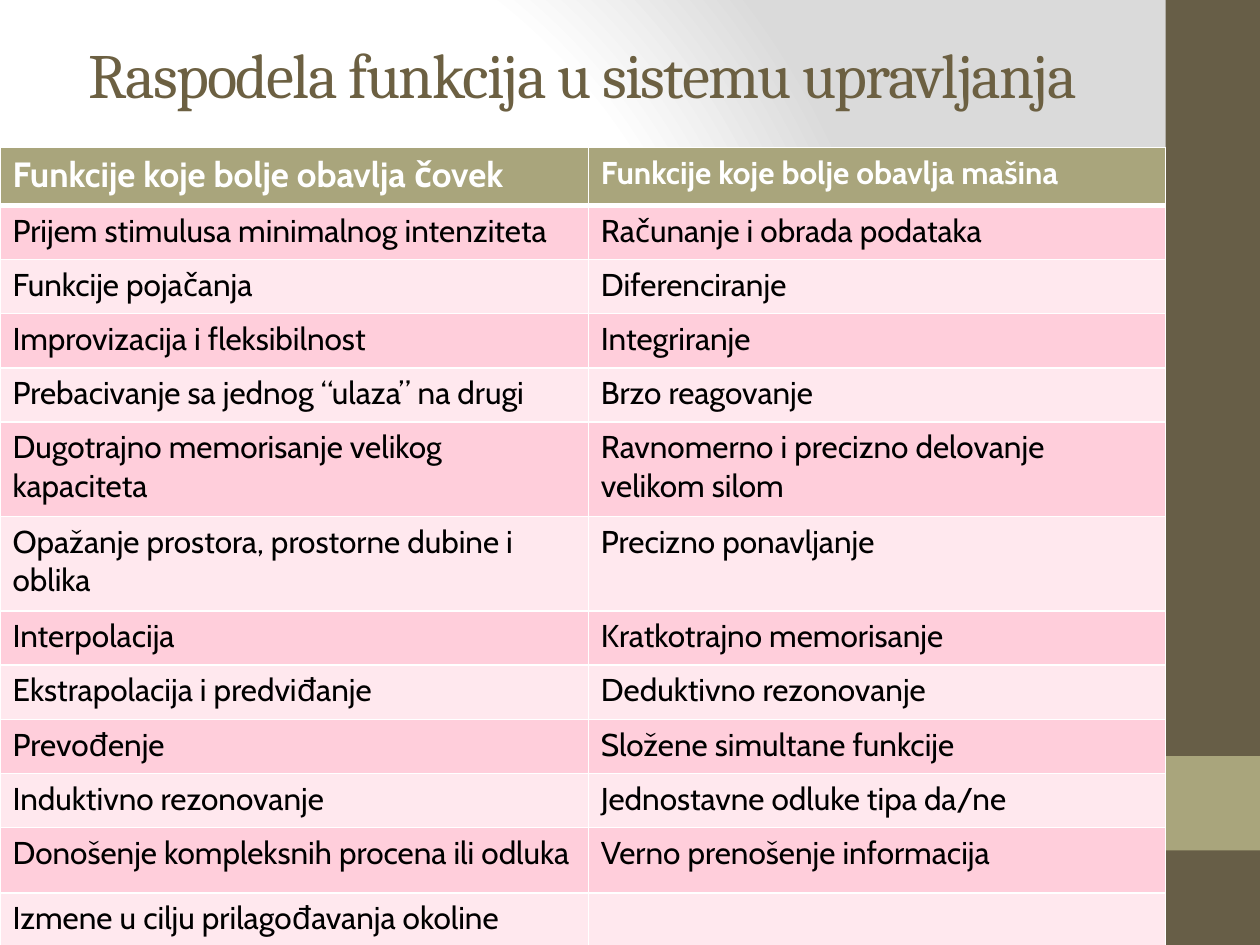
from pptx import Presentation
from pptx.dml.color import RGBColor
from pptx.enum import text
from pptx.oxml import parse_xml
from pptx.oxml.ns import nsdecls
from pptx.util import Inches, Pt

# Content
TITLE = "Raspodela funkcija u sistemu upravljanja"
HEADER = ("Funkcije koje bolje obavlja čovek", "Funkcije koje bolje obavlja mašina")
HEADER_SIZES = (20, 18)
FUNCTIONS = [
    ("Prijem stimulusa minimalnog intenziteta", "Računanje i obrada podataka"),
    ("Funkcije pojačanja", "Diferenciranje"),
    ("Improvizacija i fleksibilnost", "Integriranje"),
    ("Prebacivanje sa jednog “ulaza” na drugi", "Brzo reagovanje"),
    ("Dugotrajno memorisanje velikog kapaciteta",
     "Ravnomerno i precizno delovanje velikom silom"),
    ("Opažanje prostora, prostorne dubine i oblika", "Precizno ponavljanje"),
    ("Interpolacija", "Kratkotrajno memorisanje"),
    ("Ekstrapolacija i predviđanje", "Deduktivno rezonovanje"),
    ("Prevođenje", "Složene simultane funkcije"),
    ("Induktivno rezonovanje", "Jednostavne odluke tipa da/ne"),
    ("Donošenje kompleksnih procena ili odluka", "Verno prenošenje informacija"),
    ("Izmene u cilju prilagođavanja okoline", ""),
]

COLORS = {
    "white": "FFFFFF", "gray": "DADADA", "black": "000000",
    "brown": "675E47", "olive": "A9A57C", "title": "6C6042",
    "pink": "FFCEDB", "pale": "FFE8EE",
}

# Layout, in inches
CONTENT_WIDTH = 9.25
COLUMN_WIDTHS = (4.67, 4.58)
ROW_HEIGHT = 0.43
SPECIAL_HEIGHTS = {0: 0.46, 5: 0.75, 6: 0.75, 11: 0.52}


def color(name):
    return RGBColor.from_string(COLORS[name])


def write(frame, words, font="Cabin", size=18, fill="black", bold=False,
          align=None, spacing=None):
    paragraph = frame.paragraphs[0]
    paragraph.alignment = align
    paragraph.font.size = Pt(size)
    if not words:
        return
    run = paragraph.add_run()
    run.text = words
    run.font.name = font
    run.font.size = Pt(size)
    run.font.bold = bold
    run.font.color.rgb = color(fill)
    if spacing is not None:
        run._r.get_or_add_rPr().set("spc", str(spacing * 100))


def add_block(slide, top, height, fill):
    block = slide.shapes.add_shape(1, Inches(CONTENT_WIDTH), Inches(top),
                                   Inches(10 - CONTENT_WIDTH), Inches(height))
    block.shadow.inherit = False
    block.fill.solid()
    block.fill.fore_color.rgb = color(fill)
    block.line.fill.background()


def set_borders(cell, top=1, bottom=1):
    properties = cell._tc.get_or_add_tcPr()
    sides = (("L", 1), ("R", 1), ("T", top), ("B", bottom))
    for index, (side, width) in enumerate(sides):
        properties.insert(index, parse_xml(
            f'<a:ln{side} {nsdecls("a")} w="{Pt(width)}"><a:solidFill>'
            f'<a:srgbClr val="{COLORS["white"]}"/></a:solidFill></a:ln{side}>'))


def set_background(slide):
    stops = "".join(
        f'<a:gs pos="{position * 1000}"><a:srgbClr val="{COLORS[name]}"/></a:gs>'
        for position, name in ((0, "white"), (75, "white"), (100, "gray")))
    slide._element.cSld.insert(0, parse_xml(
        f'<p:bg {nsdecls("p", "a")}><p:bgPr><a:gradFill rotWithShape="1">'
        f'<a:gsLst>{stops}</a:gsLst><a:path path="circle">'
        '<a:fillToRect l="20000" t="50000" r="100000" b="50000"/></a:path>'
        '</a:gradFill><a:effectLst/></p:bgPr></p:bg>'))


def add_title(slide):
    box = slide.shapes.add_textbox(0, Inches(0.17), Inches(CONTENT_WIDTH), Inches(0.83))
    frame = box.text_frame
    frame.word_wrap = True
    frame.vertical_anchor = text.MSO_ANCHOR.MIDDLE
    write(frame, TITLE, font="Cambria", size=36, fill="title",
          align=text.PP_ALIGN.CENTER, spacing=-1)


def add_function_table(slide):
    rows = [HEADER] + FUNCTIONS
    heights = [SPECIAL_HEIGHTS.get(index, ROW_HEIGHT) for index in range(len(rows))]
    table = slide.shapes.add_table(
        len(rows), len(HEADER), 0, Inches(1.17),
        Inches(CONTENT_WIDTH), Inches(sum(heights))).table
    for column, width in zip(table.columns, COLUMN_WIDTHS):
        column.width = Inches(width)
    for row_index, (row, height) in enumerate(zip(rows, heights)):
        table.rows[row_index].height = Inches(height)
        is_header = row_index == 0
        fill = "olive" if is_header else ("pale", "pink")[row_index % 2]
        for column_index, words in enumerate(row):
            cell = table.cell(row_index, column_index)
            cell.fill.solid()
            cell.fill.fore_color.rgb = color(fill)
            set_borders(cell, top=3 if row_index == 1 else 1,
                        bottom=3 if is_header else 1)
            write(cell.text_frame, words, bold=is_header,
                  size=HEADER_SIZES[column_index] if is_header else 18,
                  fill="white" if is_header else "black")


def main():
    presentation = Presentation()
    presentation.slide_width = Inches(10)
    presentation.slide_height = Inches(7.5)
    slide = presentation.slides.add_slide(presentation.slide_layouts[6])
    set_background(slide)
    # Side band
    add_block(slide, 0, 7.5, "brown")
    add_block(slide, 6, 0.75, "olive")
    add_title(slide)
    add_function_table(slide)
    presentation.save("out.pptx")


if __name__ == "__main__":
    main()
